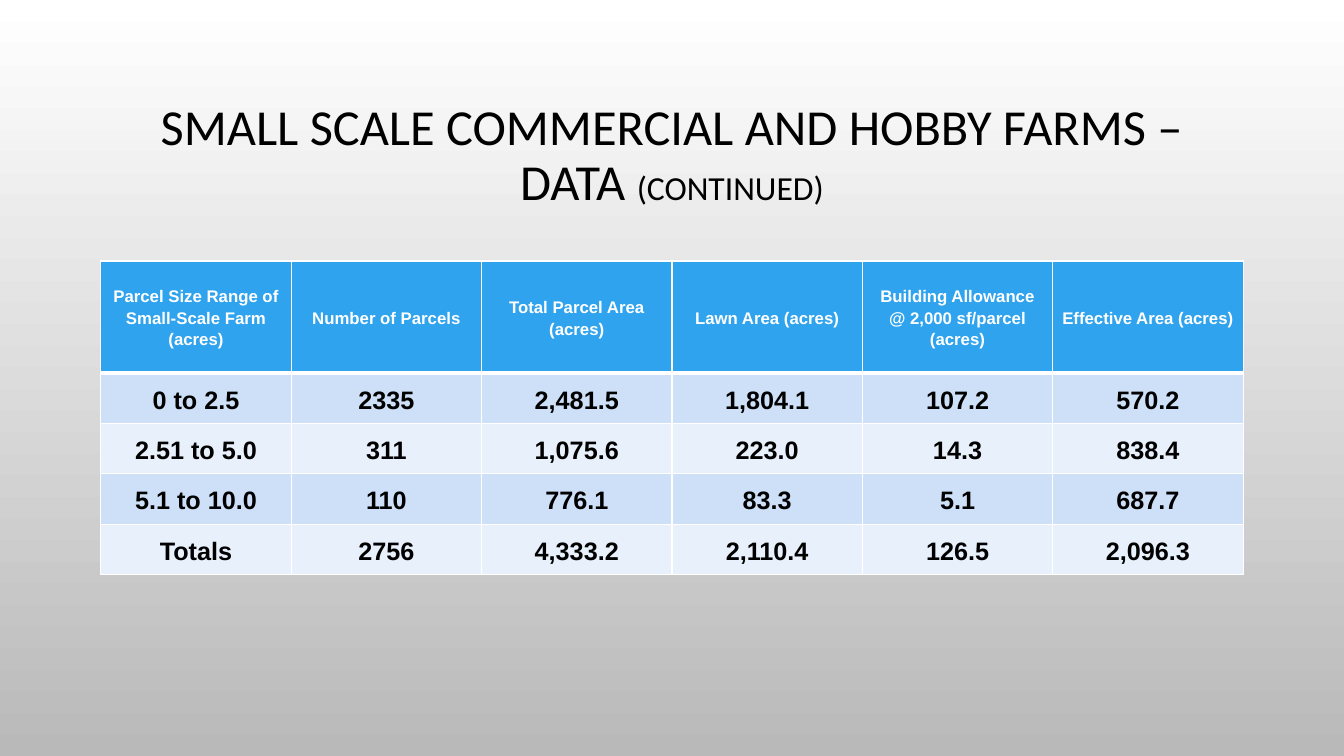
from lxml import etree
from pptx import Presentation, util as u
from pptx.dml.color import RGBColor
from pptx.enum import text as t
from pptx.oxml import ns

WHITE = RGBColor(0xFF, 0xFF, 0xFF)
BLACK = RGBColor(0, 0, 0)
GREY = RGBColor(0xB9, 0xB9, 0xB9)
BLUE = RGBColor(0x2F, 0xA3, 0xEE)
BANDS = RGBColor(0xCD, 0xE0, 0xF8), RGBColor(0xE8, 0xF0, 0xFC)

WIDE, HIGH = u.Inches(13.33), u.Inches(7.5)
EDGE = u.Inches(1)
SPAN = WIDE - 2 * EDGE
HEAD, ROW = u.Inches(1.11), u.Inches(0.5)

FARMS = [
    ["Parcel Size Range of Small-Scale Farm (acres)", "Number of Parcels",
     "Total Parcel Area (acres)", "Lawn Area (acres)",
     "Building Allowance @ 2,000 sf/parcel (acres)", "Effective Area (acres)"],
    ["0 to 2.5", "2335", "2,481.5", "1,804.1", "107.2", "570.2"],
    ["2.51 to 5.0", "311", "1,075.6", "223.0", "14.3", "838.4"],
    ["5.1 to 10.0", "110", "776.1", "83.3", "5.1", "687.7"],
    ["Totals", "2756", "4,333.2", "2,110.4", "126.5", "2,096.3"],
]


def add_run(para, words, face, size, color, bold=False):
    run = para.add_run()
    run.text = words
    run.font.name = face
    run.font.size = u.Pt(size)
    run.font.bold = bold
    run.font.color.rgb = color


def add_edge(cell, side, width):
    line = etree.Element(ns.qn("a:" + side), w=str(u.Pt(width)))
    fill = etree.SubElement(line, ns.qn("a:solidFill"))
    etree.SubElement(fill, ns.qn("a:srgbClr"), val=str(WHITE))
    return line


def set_cell(cell, words, size, color, fill, top, base):
    cell.fill.solid()
    cell.fill.fore_color.rgb = fill
    cell.vertical_anchor = t.MSO_ANCHOR.MIDDLE
    cell.margin_left = cell.margin_right = u.Inches(0.09)
    cell.margin_top = cell.margin_bottom = 0
    para = cell.text_frame.paragraphs[0]
    para.alignment = t.PP_ALIGN.CENTER
    para.line_spacing = 1.15
    add_run(para, words, "Arial", size, color, True)
    props = cell._tc.get_or_add_tcPr()
    sides = [("lnL", 1), ("lnR", 1), ("lnT", top), ("lnB", base)]
    for spot, (side, width) in enumerate(sides):
        props.insert(spot, add_edge(cell, side, width))


def add_title(slide):
    box = slide.shapes.add_textbox(EDGE, u.Inches(0.68), SPAN, u.Inches(1.75))
    frame = box.text_frame
    frame.word_wrap = True
    frame.vertical_anchor = t.MSO_ANCHOR.MIDDLE
    para = frame.paragraphs[0]
    para.alignment = t.PP_ALIGN.CENTER
    para.line_spacing = 0.9
    add_run(para, "SMALL SCALE COMMERCIAL AND HOBBY FARMS –", "Calibri", 36, BLACK)
    para.add_line_break()
    add_run(para, "DATA ", "Calibri", 36, BLACK)
    add_run(para, "(CONTINUED)", "Calibri", 24, BLACK)


def add_grid(slide):
    rows, cols = len(FARMS), len(FARMS[0])
    tall = HEAD + ROW * (rows - 1)
    grid = slide.shapes.add_table(rows, cols, EDGE, u.Inches(2.59), SPAN, tall).table
    for col in grid.columns:
        col.width = SPAN // cols
    for i, row in enumerate(FARMS):
        grid.rows[i].height = ROW if i else HEAD
        if i:
            look = 18, BLACK, BANDS[(i - 1) % 2], 3 if i == 1 else 1, 1
        else:
            look = 12, WHITE, BLUE, 1, 3
        for j, words in enumerate(row):
            set_cell(grid.cell(i, j), words, *look)


def set_back(slide):
    fill = slide.background.fill
    fill.gradient()
    fill.gradient_angle = 270
    for stop, color in zip(fill.gradient_stops, (WHITE, GREY)):
        stop.color.rgb = color


def main():
    deck = Presentation()
    deck.slide_width, deck.slide_height = WIDE, HIGH
    slide = deck.slides.add_slide(deck.slide_layouts[6])
    set_back(slide)
    add_title(slide)
    add_grid(slide)
    deck.save("out.pptx")


if __name__ == "__main__":
    main()
